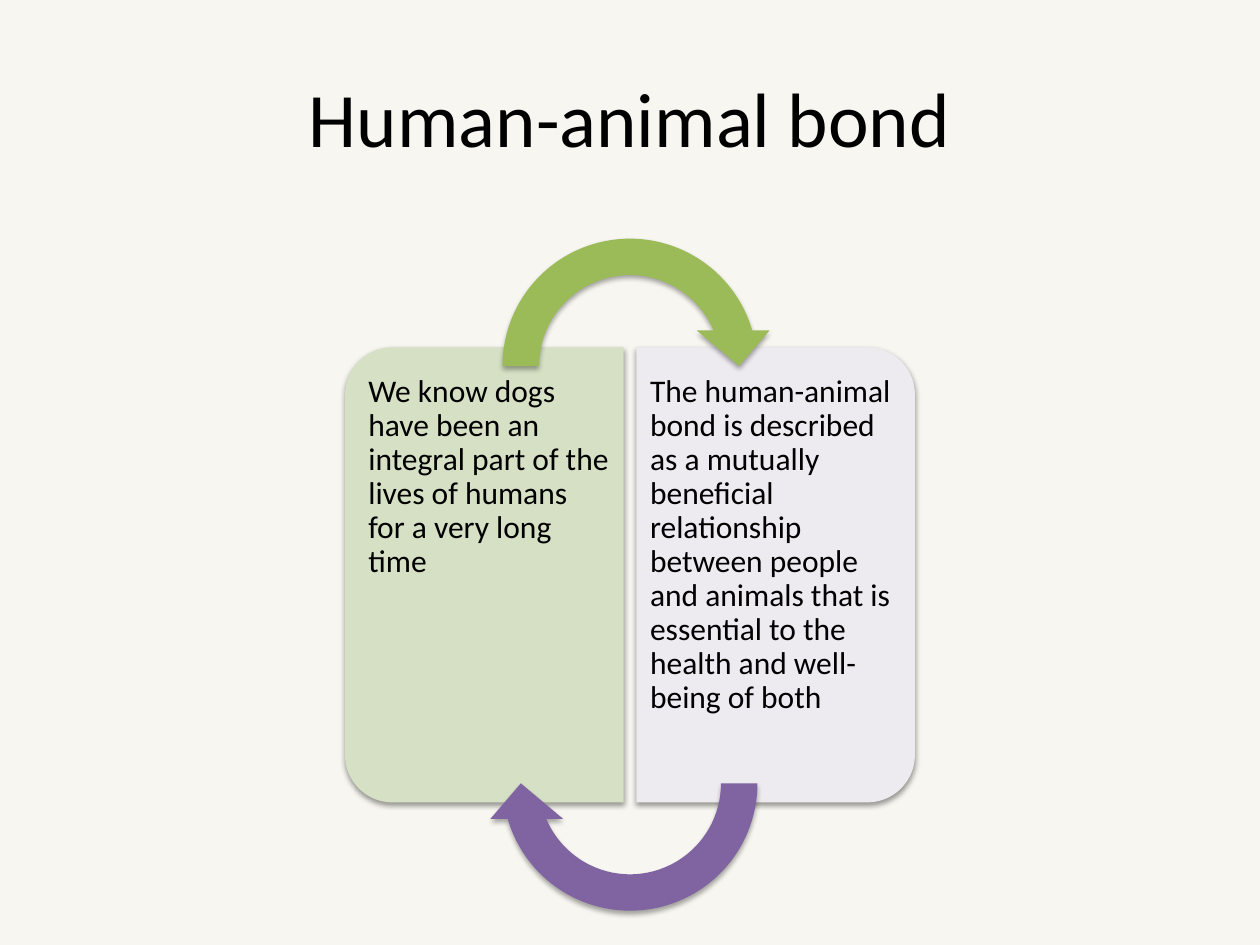
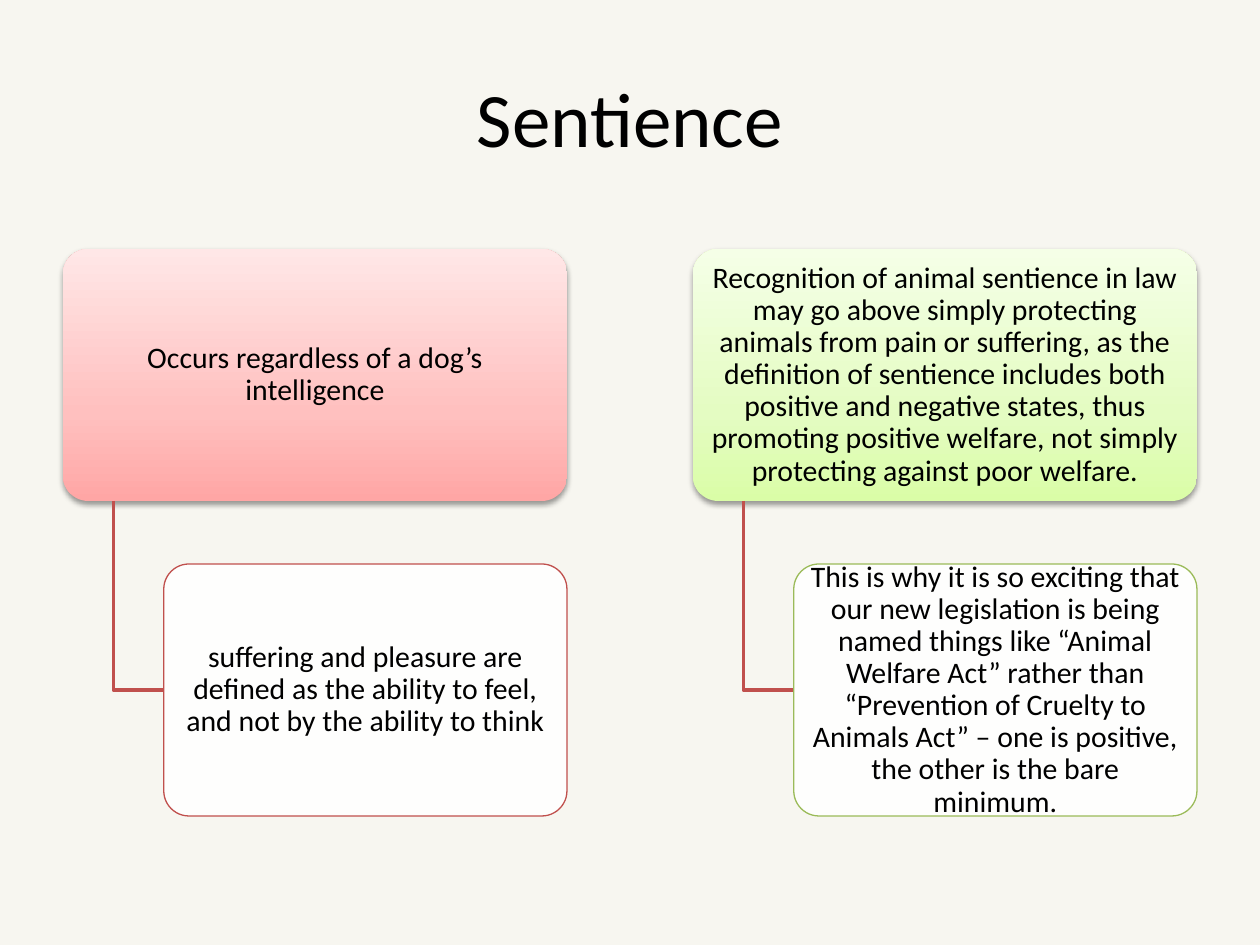
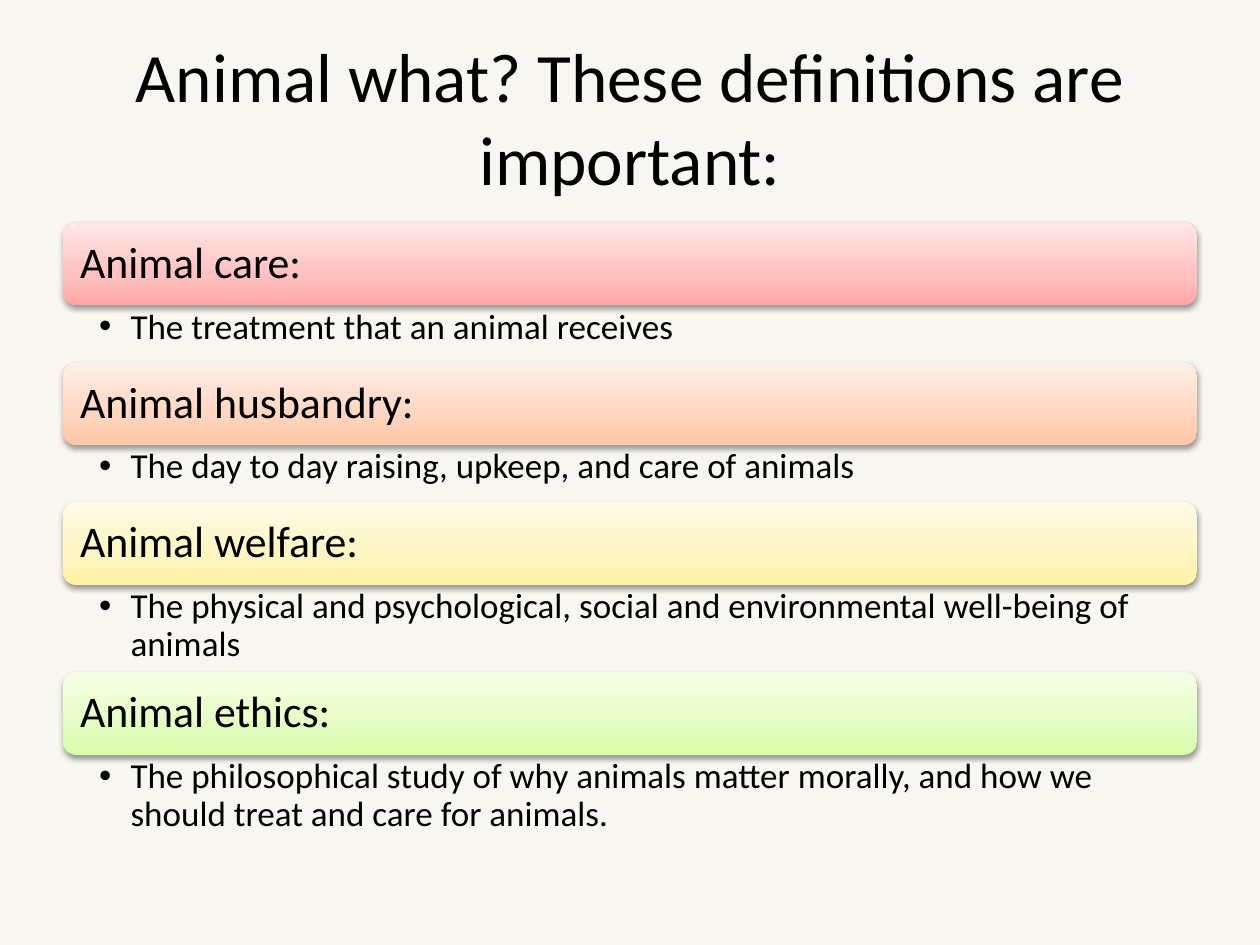
from copy import deepcopy

from lxml.etree import SubElement
from pptx import Presentation
from pptx.dml.color import RGBColor
from pptx.enum.shapes import MSO_SHAPE as Preset
from pptx.enum.text import MSO_ANCHOR as Anchor, PP_ALIGN as Align
from pptx.oxml.ns import qn
from pptx.util import Pt

FONT = "Calibri"
COLORS = {
    "page": "F7F6F0", "text": "000000", "shadow": "000000", "card": "FFFFFF",
    "red": "C0504D", "green": "9BBB59", "purple": "8064A2",
    "pale_green": "D5E0C4", "pale_purple": "EDEAF0",
}
GRADIENTS = {  # from bottom to top
    "red": ("FFA6A5", "FFC0BF", "FFE7E7"),
    "orange": ("FFC5A5", "FFD5BF", "FFEFE7"),
    "yellow": ("FFF2A5", "FEF5C0", "FFFBE7"),
    "green": ("DAFDA7", "E4FCC2", "F5FFE7"),
}
GRADIENT_STOPS = (0, 0.35, 1)

PAGE_WIDTH, PAGE_HEIGHT, SIDE = 720, 540, 36
CONTENT_WIDTH = PAGE_WIDTH - 2 * SIDE


def rgb(name):
    return RGBColor.from_string(COLORS[name])


def points(*values):
    return [Pt(value) for value in values]


def add_page(deck, title, title_size=44):
    page = deck.slides.add_slide(deck.slide_layouts[6])
    page.background.fill.solid()
    page.background.fill.fore_color.rgb = rgb("page")
    box = page.shapes.add_textbox(*points(SIDE, 21.6, CONTENT_WIDTH, 90))
    write(box, title, title_size, (7.2, 3.6, 7.2, 3.6), Align.CENTER, Anchor.MIDDLE, spacing=1)
    return page


def add_bullet(para):
    properties = para._p.get_or_add_pPr()
    properties.set("marL", str(Pt(18)))
    properties.set("indent", str(-Pt(18)))
    SubElement(properties, qn("a:buFont"), typeface="Arial")
    SubElement(properties, qn("a:buChar"), char="•")


def write(shape, text, size, margins, align=Align.LEFT, anchor=Anchor.TOP,
          spacing=0.9, bullet=False):
    """Fill a shape with one paragraph; margins are left, top, right, bottom."""
    frame = shape.text_frame
    frame.word_wrap = True
    frame.vertical_anchor = anchor
    (frame.margin_left, frame.margin_top,
     frame.margin_right, frame.margin_bottom) = points(*margins)
    para = frame.paragraphs[0]
    if bullet:
        add_bullet(para)
    para.alignment = align
    para.line_spacing = spacing
    span = para.add_run()
    span.text = text
    span.font.name = FONT
    span.font.size = Pt(size)
    span.font.color.rgb = rgb("text")


def add_preset(page, preset, bounds, adjustments=(), rotation=0):
    shape = page.shapes.add_shape(preset, *points(*bounds))
    shape.shadow.inherit = False
    shape.line.fill.background()
    shape.rotation = rotation
    for index, value in enumerate(adjustments):
        shape.adjustments[index] = value
    return shape


def set_fill(shape, color, opacity=100):
    shape.fill.solid()
    shape.fill.fore_color.rgb = rgb(color)
    if opacity < 100:
        color_element = shape._element.spPr.find(qn("a:solidFill"))[0]
        SubElement(color_element, qn("a:alpha"), val=str(opacity * 1000))


def set_gradient(shape, name):
    shape.fill.gradient()
    shape.fill.gradient_angle = 90
    stop_list = next(shape._element.spPr.iter(qn("a:gsLst")))
    stop_list.append(deepcopy(stop_list[0]))
    for stop, position, color in zip(shape.fill.gradient_stops, GRADIENT_STOPS, GRADIENTS[name]):
        stop.position = position
        stop.color.rgb = RGBColor.from_string(color)


def add_shadow(shape, distance=1.6, opacity=38):
    effects = shape._element.spPr.find(qn("a:effectLst"))
    shadow = SubElement(effects, qn("a:outerShdw"), blurRad=str(Pt(3.1)),
                        dist=str(Pt(distance)), dir="5400000", rotWithShape="0")
    color = SubElement(shadow, qn("a:srgbClr"), val=COLORS["shadow"])
    SubElement(color, qn("a:alpha"), val=str(opacity * 1000))


def add_side_card(page, center_x, rotation, color, text_left, text, margins):
    """Draw a half-rounded card turned to its side, with upright text over it."""
    length, depth, center_y = 260, 159.2, 328.5
    bounds = (center_x - length / 2, center_y - depth / 2, length, depth)
    card = add_preset(page, Preset.ROUND_2_SAME_RECTANGLE, bounds, (0.17, 0), rotation)
    set_fill(card, color)
    add_shadow(card)
    box = page.shapes.add_textbox(*points(text_left, 206, 151.2, 244.8))
    write(box, text, 18, margins)


def add_cycle_arrow(page, top, rotation, color):
    size = 166.4
    bounds = ((PAGE_WIDTH - size) / 2, top, size, size)
    arrow = add_preset(page, Preset.CIRCULAR_ARROW, bounds,
                       (0.125, 11.42, 204.58, 108, 0.125), rotation)
    set_fill(arrow, color)
    add_shadow(arrow, distance=1.8, opacity=35)


def add_tree_card(page, bounds, text):
    card = add_preset(page, Preset.ROUNDED_RECTANGLE, bounds, (0.1,))
    write(card, text, 17, (2.9, 1.4, 2.9, 1.4), Align.CENTER, Anchor.MIDDLE)
    return card


def add_branch(page, left, top, right, bottom):
    builder = page.shapes.build_freeform(*points(left, top))
    builder.add_line_segments([points(left, bottom), points(right, bottom)], close=False)
    branch = builder.convert_to_shape()
    branch.shadow.inherit = False
    branch.fill.background()
    branch.line.color.rgb = rgb("red")
    branch.line.width = Pt(2)


def add_tree(page, left, gradient, outline, parent_text, child_text):
    top, width, height, step = 142.3, 288, 144, 180
    indent = width / 5
    parent = add_tree_card(page, (left, top, width, height), parent_text)
    set_gradient(parent, gradient)
    add_shadow(parent)
    add_branch(page, left + indent / 2, top + height, left + indent, top + step + height / 2)
    child = add_tree_card(page, (left + indent, top + step, width - indent, height), child_text)
    set_fill(child, "card", opacity=90)
    child.line.color.rgb = rgb(outline)
    child.line.width = Pt(0.75)


def add_definition(page, top, gradient, term, meaning, meaning_height):
    """Draw a term bar with its meaning below and return the bottom edge."""
    bar_height = 47.4
    bar = add_preset(page, Preset.ROUNDED_RECTANGLE, (SIDE, top, CONTENT_WIDTH, bar_height))
    set_gradient(bar, gradient)
    add_shadow(bar)
    write(bar, term, 25, (7.5, 7.2, 7.5, 7.2), anchor=Anchor.MIDDLE)
    top += bar_height
    box = page.shapes.add_textbox(*points(SIDE, top, CONTENT_WIDTH, meaning_height))
    write(box, meaning, 20, (20.6, 1.8, 13.7, 1.8), bullet=True)
    return top + meaning_height


def build_bond_page(deck):
    page = add_page(deck, "Human-animal bond")
    middle, offset = PAGE_WIDTH / 2, 83.2
    add_side_card(page, middle - offset, 270, "pale_green", 205.2,
                  "We know dogs have been an integral part of the lives of humans "
                  "for a very long time", (5.3, 8.6, 7.9, 8.6))
    add_side_card(page, middle + offset, 90, "pale_purple", 363.6,
                  "The human-animal bond is described as a mutually beneficial relationship "
                  "between people and animals that is essential to the health and "
                  "well-being of both", (7.9, 8.6, 5.3, 8.6))
    add_cycle_arrow(page, 126, 0, "green")
    add_cycle_arrow(page, 364.4, 180, "purple")


def build_sentience_page(deck):
    page = add_page(deck, "Sentience")
    add_tree(page, SIDE, "red", "red",
             "Occurs regardless of a dog’s intelligence",
             "suffering and pleasure are defined as the ability to feel, "
             "and not by the ability to think")
    add_tree(page, PAGE_WIDTH / 2 + SIDE, "green", "green",
             "Recognition of animal sentience in law may go above simply protecting animals "
             "from pain or suffering, as the definition of sentience includes both positive "
             "and negative states, thus promoting positive welfare, not simply protecting "
             "against poor welfare.",
             "This is why it is so exciting that our new legislation is being named things "
             "like “Animal Welfare Act” rather than “Prevention of Cruelty to Animals Act” "
             "– one is positive, the other is the bare minimum.")


def build_definitions_page(deck):
    page = add_page(deck, "Animal what? These definitions are important:", 39.6)
    one_line, two_lines = 32.5, 49.7
    definitions = (
        ("red", "Animal care:", "The treatment that an animal receives", one_line),
        ("orange", "Animal husbandry:",
         "The day to day raising, upkeep, and care of animals", one_line),
        ("yellow", "Animal welfare:",
         "The physical and psychological, social and environmental well-being of animals",
         two_lines),
        ("green", "Animal ethics:",
         "The philosophical study of why animals matter morally, and how we should treat "
         "and care for animals.", two_lines),
    )
    top = 127.2
    for definition in definitions:
        top = add_definition(page, top, *definition)


def main():
    deck = Presentation()
    deck.slide_width, deck.slide_height = points(PAGE_WIDTH, PAGE_HEIGHT)
    build_bond_page(deck)
    build_sentience_page(deck)
    build_definitions_page(deck)
    deck.save("out.pptx")


if __name__ == "__main__":
    main()
